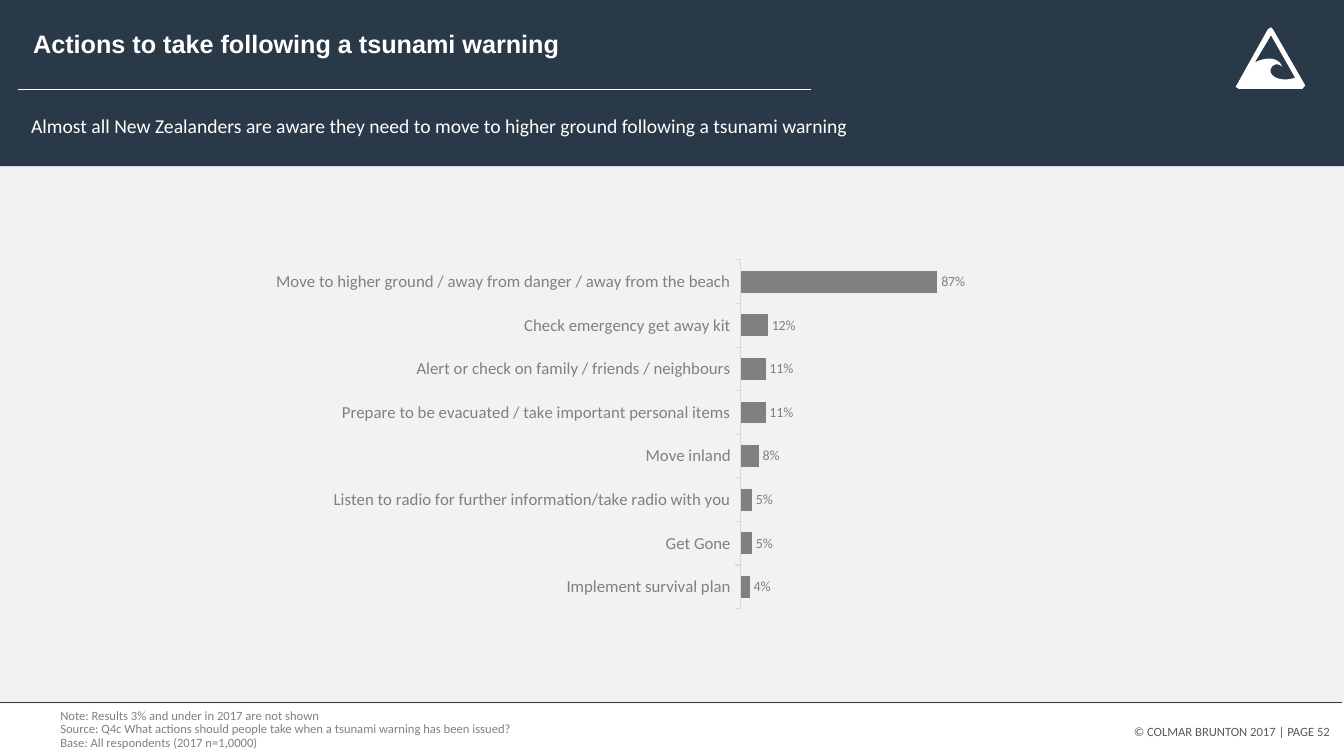
"""Build the slide on actions to take following a tsunami warning."""
from dataclasses import dataclass

from lxml import etree
from pptx import Presentation
from pptx.chart.data import CategoryChartData
from pptx.dml.color import RGBColor
from pptx.enum.chart import XL_CHART_TYPE, XL_LABEL_POSITION, XL_TICK_MARK
from pptx.enum.shapes import MSO_CONNECTOR, MSO_SHAPE
from pptx.enum.text import MSO_ANCHOR, MSO_AUTO_SIZE, PP_ALIGN
from pptx.oxml.ns import qn
from pptx.util import Cm, Pt

BAR = XL_CHART_TYPE.BAR_CLUSTERED
OUTSIDE_END = XL_LABEL_POSITION.OUTSIDE_END
TICK_OUTSIDE = XL_TICK_MARK.OUTSIDE
STRAIGHT = MSO_CONNECTOR.STRAIGHT
RECTANGLE = MSO_SHAPE.RECTANGLE
TOP, MIDDLE = MSO_ANCHOR.TOP, MSO_ANCHOR.MIDDLE
NO_AUTOFIT = MSO_AUTO_SIZE.NONE
LEFT, RIGHT = PP_ALIGN.LEFT, PP_ALIGN.RIGHT


@dataclass(frozen=True)
class Theme:
    navy: RGBColor = RGBColor.from_string("2A3947")
    white: RGBColor = RGBColor.from_string("FFFFFF")
    panel: RGBColor = RGBColor.from_string("F2F2F2")
    grey: RGBColor = RGBColor.from_string("808080")
    dark_grey: RGBColor = RGBColor.from_string("595959")
    axis: RGBColor = RGBColor.from_string("D9D9D9")
    heading_font: str = "Arial"
    body_font: str = "Calibri"
    title_size: Pt = Pt(18)
    subtitle_size: Pt = Pt(14)
    category_size: Pt = Pt(12)
    label_size: Pt = Pt(10)
    note_size: Pt = Pt(9)


THEME = Theme()

ACTIONS = {
    "Move to higher ground / away from danger / away from the beach": 0.87,
    "Check emergency get away kit": 0.12,
    "Alert or check on family / friends / neighbours": 0.11,
    "Prepare to be evacuated / take important personal items": 0.11,
    "Move inland": 0.08,
    "Listen to radio for further information/take radio with you": 0.05,
    "Get Gone": 0.05,
    "Implement survival plan": 0.04,
}
NOTES = [
    "Note: Results 3% and under in 2017 are not shown",
    "Source: Q4c What actions should people take when a tsunami warning has been issued?",
    "Base: All respondents (2017 n=1,0000)",
]
PLOT_LAYOUT = {"x": 0.676, "y": 0.037, "w": 0.227, "h": 0.925}

ICON_LEFT, ICON_TOP = 31.14, 0.69
TRIANGLE = [(1.73, 1.42), (0.94, 0.05), (0.89, 0), (0.81, 0.05), (0.03, 1.45),
            (0, 1.5), (0.08, 1.55), (1.68, 1.55), (1.75, 1.47)]
SKY_APEX, SKY_CORNER = (0.89, 0.2), (1.5, 1.27)
WAVE_CURVES = [
    [(1.19, 1.37), (1.02, 1.27), (0.97, 1.24)],
    [(0.74, 1.09), (0.99, 0.81), (1.17, 0.99)],
    [(1.12, 0.84), (0.97, 0.79), (0.86, 0.79)],
    [(0.79, 0.79), (0.66, 0.79), (0.48, 0.89)],
]


def place(shape, left, top, width, height):
    shape.left, shape.top = Cm(left), Cm(top)
    shape.width, shape.height = Cm(width), Cm(height)


def style_font(font, size, color, name=THEME.body_font, bold=False):
    font.size, font.name, font.bold = size, name, bold
    font.color.rgb = color


def write_text(shape, lines, size, color, name=THEME.body_font, bold=False,
               align=LEFT, anchor=MIDDLE, spacing=0.9):
    frame = shape.text_frame
    frame.word_wrap = True
    frame.auto_size = NO_AUTOFIT
    frame.vertical_anchor = anchor
    frame.text = "\n".join(lines)
    for paragraph in frame.paragraphs:
        paragraph.alignment = align
        paragraph.line_spacing = spacing
        paragraph.space_before = Pt(0)
        style_font(paragraph.font, size, color, name, bold)


def remove_bullets(shape):
    for paragraph in shape.text_frame.paragraphs:
        properties = paragraph._p.get_or_add_pPr()
        properties.set("marL", "0")
        properties.set("indent", "0")
        bullet = etree.Element(qn("a:buNone"))
        default_run = properties.find(qn("a:defRPr"))
        if default_run is None:
            properties.append(bullet)
        else:
            default_run.addprevious(bullet)


def paint(shape, color):
    shape.shadow.inherit = False
    shape.fill.solid()
    shape.fill.fore_color.rgb = color
    shape.line.fill.background()


def add_band(slide, top, height, color):
    band = slide.shapes.add_shape(RECTANGLE, 0, Cm(top), Cm(33.87), Cm(height))
    paint(band, color)


def add_rule(slide, left, right, y, color):
    rule = slide.shapes.add_connector(STRAIGHT, Cm(left), Cm(y), Cm(right), Cm(y))
    rule.line.color.rgb = color
    rule.line.width = Pt(0.5)
    etree.SubElement(rule._element.spPr, qn("a:effectLst"))


def add_text(slide, box, lines, color, **options):
    shape = slide.shapes.add_textbox(0, 0, 0, 0)
    place(shape, *box)
    write_text(shape, lines, THEME.note_size, color, **options)


def curve_points(start, controls, steps=10):
    points = [start, *controls]
    for step in range(1, steps + 1):
        t = step / steps
        weights = ((1 - t) ** 3, 3 * t * (1 - t) ** 2, 3 * t * t * (1 - t), t ** 3)
        yield tuple(sum(w * p[axis] for w, p in zip(weights, points)) for axis in (0, 1))


def add_wave_icon(slide):
    sky = [SKY_APEX, SKY_CORNER]
    for controls in WAVE_CURVES:
        sky.extend(curve_points(sky[-1], controls))
    triangle, sky = ([(Cm(ICON_LEFT + x), Cm(ICON_TOP + y)) for x, y in outline]
                     for outline in (TRIANGLE, sky))
    builder = slide.shapes.build_freeform(*triangle[0])
    builder.add_line_segments(triangle[1:])
    builder.move_to(*sky[0])
    builder.add_line_segments(sky[1:])
    paint(builder.convert_to_shape(), THEME.white)


def set_plot_layout(chart):
    plot_area = chart._chartSpace.chart.plotArea
    for old_layout in plot_area.findall(qn("c:layout")):
        plot_area.remove(old_layout)
    layout = etree.Element(qn("c:layout"))
    manual = etree.SubElement(layout, qn("c:manualLayout"))
    settings = {"layoutTarget": "inner", "xMode": "edge", "yMode": "edge", **PLOT_LAYOUT}
    for tag, value in settings.items():
        etree.SubElement(manual, qn(f"c:{tag}")).set("val", str(value))
    plot_area.insert(0, layout)


def add_actions_chart(slide):
    data = CategoryChartData(number_format="0%")
    data.categories = list(ACTIONS)
    data.add_series("Series 1", list(ACTIONS.values()))
    chart = slide.shapes.add_chart(BAR, Cm(1.7), Cm(6.2), Cm(25.1), Cm(9.5), data).chart
    chart.has_legend = chart.has_title = False
    style_font(chart.font, THEME.label_size, THEME.grey)
    categories, values = chart.category_axis, chart.value_axis
    categories.reverse_order = True
    categories.major_tick_mark = TICK_OUTSIDE
    categories.format.line.color.rgb = THEME.axis
    categories.format.line.width = Pt(0.75)
    style_font(categories.tick_labels.font, THEME.category_size, THEME.grey)
    values.minimum_scale, values.maximum_scale = 0, 1
    values.has_major_gridlines = values.visible = False
    plot = chart.plots[0]
    plot.gap_width, plot.vary_by_categories = 100, False
    fill = plot.series[0].format.fill
    fill.solid()
    fill.fore_color.rgb = THEME.grey
    plot.has_data_labels = True
    labels = plot.data_labels
    labels.show_value, labels.position = True, OUTSIDE_END
    labels.number_format, labels.number_format_is_linked = "0%", False
    style_font(labels.font, THEME.label_size, THEME.grey)
    set_plot_layout(chart)


def bring_to_front(shape):
    shape._element.getparent().append(shape._element)


def main():
    presentation = Presentation()
    presentation.slide_width, presentation.slide_height = Cm(33.87), Cm(19.05)
    slide = presentation.slides.add_slide(presentation.slide_layouts[1])
    title, subtitle = slide.placeholders
    add_band(slide, 3.05, 14.68, THEME.panel)
    add_band(slide, 0, 4.19, THEME.navy)
    add_text(slide, (23.75, 18.11, 10.01, 0.64), ["© COLMAR BRUNTON 2017 | PAGE 52"],
             THEME.dark_grey, align=RIGHT, anchor=TOP, spacing=1.0)
    add_rule(slide, 0, 33.83, 17.7, THEME.navy)
    add_rule(slide, 0.46, 20.45, 2.26, THEME.white)
    place(subtitle, 0.53, 2.39, 21.56, 1.65)
    write_text(subtitle, ["Almost all New Zealanders are aware they need to move to higher "
                          "ground following a tsunami warning"], THEME.subtitle_size, THEME.white)
    remove_bullets(subtitle)
    place(title, 0.58, 0.23, 17.7, 1.83)
    write_text(title, ["Actions to take following a tsunami warning"], THEME.title_size,
               THEME.white, name=THEME.heading_font, bold=True)
    for placeholder in (subtitle, title):
        bring_to_front(placeholder)
    add_text(slide, (1.27, 18.06, 21.56, 0.66), NOTES, THEME.grey)
    add_actions_chart(slide)
    add_wave_icon(slide)
    presentation.save("out.pptx")


if __name__ == "__main__":
    main()
